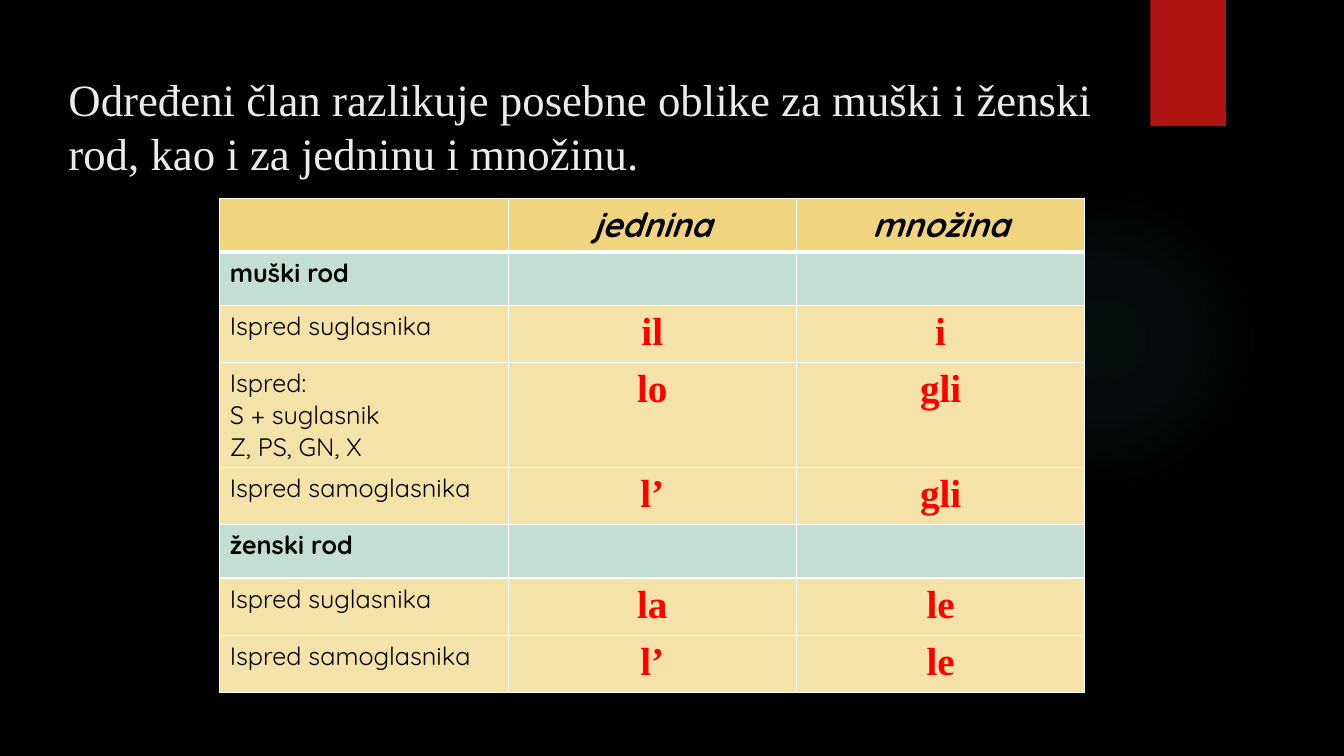
from dataclasses import dataclass

import pptx
import pptx.dml.color
import pptx.enum.shapes
import pptx.enum.text
import pptx.oxml
import pptx.oxml.ns
import pptx.util

Inches = pptx.util.Inches
Align = pptx.enum.text.PP_ALIGN
Anchor = pptx.enum.text.MSO_ANCHOR
Shape = pptx.enum.shapes.MSO_SHAPE


@dataclass(frozen=True)
class Theme:
    background: str = "000000"
    glow: str = "50B9C1"
    ribbon: str = "B01513"
    title: str = "EBEBEB"
    header: str = "F0D47F"
    gender: str = "C3DED3"
    body: str = "F5E2A9"
    border: str = "FFFFFF"
    label: str = "000000"
    article: str = "FF0000"
    serif: str = "Times New Roman"
    sans: str = "Quicksand"
    title_size: int = 32
    article_size: int = 28
    header_size: int = 24
    label_size: int = 18


@dataclass(frozen=True)
class ArticleRow:
    label: str
    singular: str = ""
    plural: str = ""
    height: float = 0.53
    kind: str = "body"


THEME = Theme()
COLUMN_WIDTH = 2.86
ROWS = [
    ArticleRow("", "jednina", "množina", kind="header"),
    ArticleRow("muški rod", kind="gender"),
    ArticleRow("Ispred suglasnika", "il", "i"),
    ArticleRow("Ispred:\nS + suglasnik\nZ, PS, GN, X", "lo", "gli", height=1.04),
    ArticleRow("Ispred samoglasnika", "l’", "gli"),
    ArticleRow("ženski rod", kind="gender"),
    ArticleRow("Ispred suglasnika", "la", "le"),
    ArticleRow("Ispred samoglasnika", "l’", "le"),
]


def rgb(value: str) -> pptx.dml.color.RGBColor:
    return pptx.dml.color.RGBColor.from_string(value)


def write_text(frame, text: str, *, font: str, size: int, color: str,
               bold: bool = False, italic: bool = False,
               align: Align = Align.LEFT) -> None:
    """Fill a text frame, one paragraph per line of text."""
    for index, line in enumerate(text.split("\n")):
        para = frame.paragraphs[0] if index == 0 else frame.add_paragraph()
        para.alignment = align
        span = para.add_run()
        span.text = line
        span.font.name = font
        span.font.size = pptx.util.Pt(size)
        span.font.color.rgb = rgb(color)
        span.font.bold = bold
        span.font.italic = italic


def add_plain_shape(page, kind: Shape, left: float, top: float,
                    width: float, height: float, color: str):
    shape = page.shapes.add_shape(
        kind, Inches(left), Inches(top), Inches(width), Inches(height))
    shape.shadow.inherit = False
    shape.fill.solid()
    shape.fill.fore_color.rgb = rgb(color)
    shape.line.fill.background()
    return shape


def add_glow(page) -> None:
    """Draw the faint circle that fades out from its centre."""
    glow = add_plain_shape(page, Shape.OVAL, 9.41, 1.83, 3.08, 3.08, THEME.glow)
    stops = "".join(
        f'<a:gs pos="{position * 1000}"><a:srgbClr val="{THEME.glow}">'
        f'<a:alpha val="{alpha * 1000}"/></a:srgbClr></a:gs>'
        for position, alpha in ((0, 7), (36, 6), (69, 0)))
    gradient = pptx.oxml.parse_xml(
        f'<a:gradFill {pptx.oxml.ns.nsdecls("a")}><a:gsLst>{stops}</a:gsLst>'
        '<a:path path="circle"><a:fillToRect l="50000" t="50000" r="50000" '
        'b="50000"/></a:path></a:gradFill>')
    properties = glow.element.spPr
    solid = properties.find(pptx.oxml.ns.qn("a:solidFill"))
    properties.replace(solid, gradient)


def set_borders(cell, top: int = 1, bottom: int = 1) -> None:
    """Add the four cell borders, with widths in points."""
    properties = cell._tc.get_or_add_tcPr()
    widths = {"L": 1, "R": 1, "T": top, "B": bottom}
    for index, (side, width) in enumerate(widths.items()):
        properties.insert(index, pptx.oxml.parse_xml(
            f'<a:ln{side} {pptx.oxml.ns.nsdecls("a")} w="{width * 12700}">'
            f'<a:solidFill><a:srgbClr val="{THEME.border}"/></a:solidFill>'
            f'</a:ln{side}>'))


def add_article_table(page) -> None:
    height = sum(row.height for row in ROWS)
    table = page.shapes.add_table(
        len(ROWS), 3, Inches(2.18), Inches(1.97),
        Inches(3 * COLUMN_WIDTH), Inches(height)).table
    for column in table.columns:
        column.width = Inches(COLUMN_WIDTH)
    fills = {"header": THEME.header, "gender": THEME.gender, "body": THEME.body}
    label_style = dict(font=THEME.sans, size=THEME.label_size, color=THEME.label)
    header_style = dict(font=THEME.sans, size=THEME.header_size,
                        color=THEME.label, bold=True, italic=True,
                        align=Align.CENTER)
    article_style = dict(font=THEME.serif, size=THEME.article_size,
                         color=THEME.article, bold=True, align=Align.CENTER)
    for row_index, row in enumerate(ROWS):
        table.rows[row_index].height = Inches(row.height)
        value_style = header_style if row.kind == "header" else article_style
        first_style = label_style | {"bold": row.kind == "gender"}
        for column_index, text in enumerate((row.label, row.singular, row.plural)):
            cell = table.cell(row_index, column_index)
            cell.fill.solid()
            cell.fill.fore_color.rgb = rgb(fills[row.kind])
            set_borders(cell, top=3 if row_index == 1 else 1,
                        bottom=3 if row_index == 0 else 1)
            if text:
                style = value_style if column_index else first_style
                write_text(cell.text_frame, text, **style)


def main() -> None:
    deck = pptx.Presentation()
    deck.slide_width, deck.slide_height = Inches(13.33), Inches(7.5)
    page = deck.slides.add_slide(deck.slide_layouts[6])
    page.background.fill.solid()
    page.background.fill.fore_color.rgb = rgb(THEME.background)

    # Background decoration
    add_glow(page)
    add_plain_shape(page, Shape.RECTANGLE, 11.41, 0, 0.75, 1.25, THEME.ribbon)

    # Title
    box = page.shapes.add_textbox(
        Inches(0.58), Inches(0.66), Inches(11.01), Inches(1.32))
    box.text_frame.word_wrap = True
    box.text_frame.vertical_anchor = Anchor.TOP
    write_text(box.text_frame,
               "Određeni član razlikuje posebne oblike za muški i ženski rod, "
               "kao i za jedninu i množinu.",
               font=THEME.serif, size=THEME.title_size, color=THEME.title)

    # Definite articles by gender and number
    add_article_table(page)
    deck.save("out.pptx")


if __name__ == "__main__":
    main()
